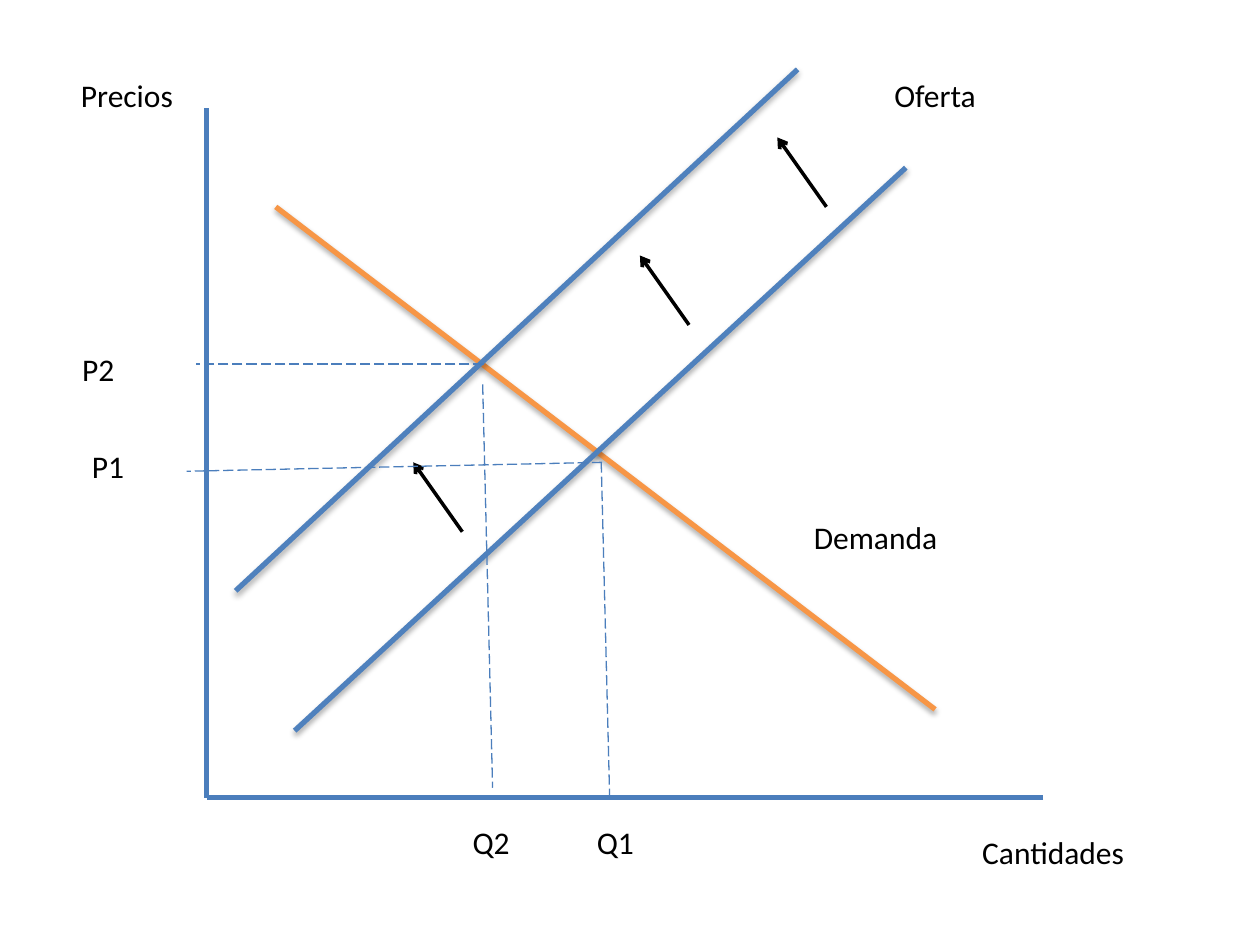
import pptx
import pptx.dml.color
import pptx.enum.dml
import pptx.enum.shapes
import pptx.enum.text
import pptx.oxml.ns
import pptx.util
from lxml import etree
from pptx.util import Cm

AXIS = "4B7EBC"
SUPPLY = "4F81BD"
DEMAND = "F79646"
BLACK = "000000"
ORIGIN_X, ORIGIN_Y = 4.17, 16.08


def rgb(value):
    return pptx.dml.color.RGBColor.from_string(value)


def child(parent, tag, **attributes):
    return etree.SubElement(parent, pptx.oxml.ns.qn(tag), **attributes)


def add_line(s, start, end, color, width):
    points = [Cm(v) for v in (*start, *end)]
    line = s.shapes.add_connector(pptx.enum.shapes.MSO_CONNECTOR.STRAIGHT, *points)
    line.line.color.rgb = rgb(color)
    line.line.width = pptx.util.Pt(width)
    effects = child(line.element.spPr, "a:effectLst")
    return line, effects


def add_curve(s, start, end, color):
    line, effects = add_line(s, start, end, color, 3)
    shadow = child(effects, "a:outerShdw", blurRad="40000", dist="23000",
                   dir="5400000", rotWithShape="0")
    shade = child(shadow, "a:srgbClr", val=BLACK)
    child(shade, "a:alpha", val="35000")


def add_shift_arrow(s, x, y):
    line, effects = add_line(s, (x, y), (x - 0.99, y - 1.4), BLACK, 2)
    child(line.line._get_or_add_ln(), "a:tailEnd", type="arrow")


def add_guide(s, start, end):
    line, effects = add_line(s, start, end, AXIS, 0.75)
    line.line.dash_style = pptx.enum.dml.MSO_LINE.LONG_DASH


def add_label(s, text, left, top, width=3.96):
    box = s.shapes.add_textbox(Cm(left), Cm(top), Cm(width), Cm(1.02))
    tf = box.text_frame
    tf.word_wrap = True
    tf.auto_size = pptx.enum.text.MSO_AUTO_SIZE.SHAPE_TO_FIT_TEXT
    tf.text = text
    p = tf.paragraphs[0]
    p.alignment = pptx.enum.text.PP_ALIGN.CENTER
    r = p.runs[0]
    r.font.name = "Calibri"
    r.font.size = pptx.util.Pt(18)
    r.font.color.rgb = rgb(BLACK)


def main():
    prs = pptx.Presentation()
    prs.slide_width, prs.slide_height = Cm(25.4), Cm(19.05)
    s = prs.slides.add_slide(prs.slide_layouts[6])

    for end in ((ORIGIN_X, 2.18), (21.03, ORIGIN_Y)):
        add_line(s, end, (ORIGIN_X, ORIGIN_Y), AXIS, 3)

    add_curve(s, (5.56, 4.17), (18.85, 14.3), DEMAND)
    add_curve(s, (18.26, 3.38), (5.94, 14.73), SUPPLY)
    add_curve(s, (16.08, 1.4), (4.75, 11.91), SUPPLY)

    for x, y in ((13.89, 6.55), (16.66, 4.17), (9.32, 10.72)):
        add_shift_arrow(s, x, y)

    add_guide(s, (12.12, 9.32), (12.29, ORIGIN_Y))
    add_guide(s, (9.73, 7.75), (9.93, 15.88))
    add_guide(s, (12.14, 9.32), (3.76, 9.5))
    add_guide(s, (9.75, 7.34), (3.96, 7.34))

    add_label(s, "Precios", 0.58, 1.4)
    add_label(s, "Cantidades", 19.25, 16.66)
    add_label(s, "Oferta", 16.87, 1.4)
    add_label(s, "Demanda", 15.67, 10.31)
    add_label(s, "Q1", 10.92, 16.46, 2.97)
    add_label(s, "Q2", 7.92, 16.46)
    add_label(s, "P1", 0.2, 8.89)
    add_label(s, "P2", 0, 6.93)

    prs.save("out.pptx")


if __name__ == "__main__":
    main()
